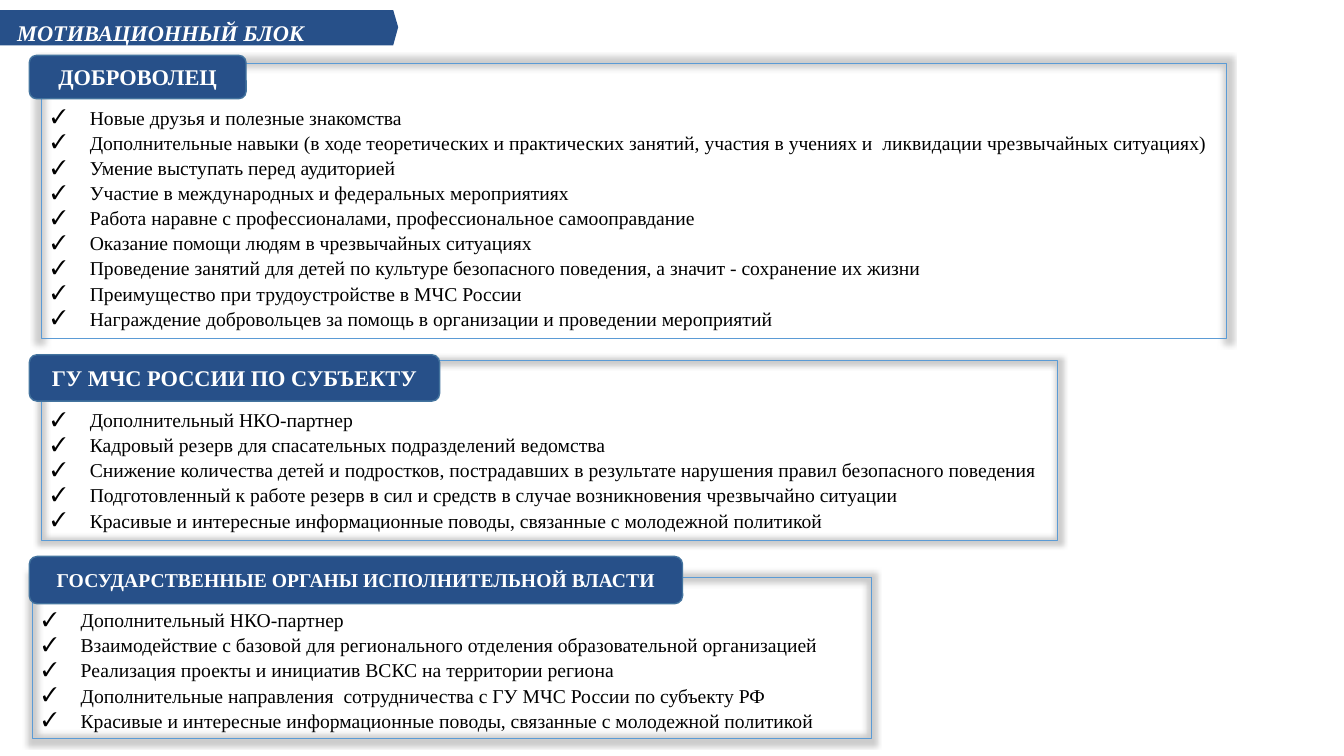
from lxml import etree
from pptx import Presentation
from pptx.dml.color import RGBColor
from pptx.enum.shapes import MSO_SHAPE
from pptx.enum.text import MSO_ANCHOR, MSO_AUTO_SIZE, PP_ALIGN
from pptx.oxml.ns import qn
from pptx.util import Inches, Pt

ROUNDED = MSO_SHAPE.ROUNDED_RECTANGLE
TOP, MIDDLE = MSO_ANCHOR.TOP, MSO_ANCHOR.MIDDLE
LEFT, CENTER = PP_ALIGN.LEFT, PP_ALIGN.CENTER
NO_FIT = MSO_AUTO_SIZE.NONE

SLIDE_W, SLIDE_H = Inches(13.33), Inches(7.5)
FONT = "Times New Roman"
COLORS = {
    "navy": "275089",
    "tab_line": "43739E",
    "panel_line": "5B9BD5",
    "text": "000000",
    "white": "FFFFFF",
    "glow": "000000",
}
COMPARISON_LAYOUT = 4
HANG = Inches(0.38)

BLOCKS = [
    {
        "heading": "ДОБРОВОЛЕЦ",
        "size": 16,
        "tab": (2.18, 7.33, 16.13, 5.73),
        "panel": (3.08, 8.4, 88.15, 36.4),
        "inset": 5.33,
        "items": [
            "Новые друзья и полезные знакомства",
            "Дополнительные навыки (в ходе теоретических и практических занятий, "
            "участия в учениях и  ликвидации чрезвычайных ситуациях)",
            "Умение выступать перед аудиторией",
            "Участие в международных и федеральных мероприятиях",
            "Работа наравне с профессионалами, профессиональное самооправдание",
            "Оказание помощи людям в чрезвычайных ситуациях",
            "Проведение занятий для детей по культуре безопасного поведения, "
            "а значит - сохранение их жизни",
            "Преимущество при трудоустройстве в МЧС России",
            "Награждение добровольцев за помощь в организации и проведении мероприятий",
        ],
    },
    {
        "heading": "ГУ МЧС РОССИИ ПО СУБЪЕКТУ",
        "size": 16,
        "tab": (2.18, 46.93, 30.53, 6.13),
        "panel": (3.08, 47.73, 75.62, 23.73),
        "inset": 6,
        "items": [
            "Дополнительный НКО-партнер",
            "Кадровый резерв для спасательных подразделений ведомства",
            "Снижение количества детей и подростков, пострадавших в результате "
            "нарушения правил безопасного поведения",
            "Подготовленный к работе резерв в сил и средств в случае "
            "возникновения чрезвычайно ситуации",
            "Красивые и интересные информационные поводы, связанные с молодежной политикой",
        ],
    },
    {
        "heading": "ГОСУДАРСТВЕННЫЕ ОРГАНЫ ИСПОЛНИТЕЛЬНОЙ ВЛАСТИ",
        "size": 14,
        "tab": (2.18, 73.6, 48.61, 6.27),
        "panel": (2.4, 76.4, 62.42, 21.33),
        "inset": 3.8,
        "items": [
            "Дополнительный НКО-партнер",
            "Взаимодействие с базовой для регионального отделения "
            "образовательной организацией",
            "Реализация проекты и инициатив ВСКС на территории региона",
            "Дополнительные направления  сотрудничества с ГУ МЧС России по субъекту РФ",
            "Красивые и интересные информационные поводы, связанные с молодежной политикой",
        ],
    },
]


def rgb(name):
    """Return a palette colour."""
    return RGBColor.from_string(COLORS[name])


def across(share):
    """Convert a percentage of the slide width to a length."""
    return int(SLIDE_W * share / 100)


def down(share):
    """Convert a percentage of the slide height to a length."""
    return int(SLIDE_H * share / 100)


def box(x, y, w, h):
    """Convert percentage shares to left, top, width and height."""
    return across(x), down(y), across(w), down(h)


def place(sp, shares):
    """Move a placeholder to the given shares of the slide."""
    sp.left, sp.top, sp.width, sp.height = box(*shares)


def write(p, text, size=14, color="text", bold=False, italic=False, align=LEFT, spacing=None):
    """Write formatted text into a paragraph."""
    r = p.add_run()
    r.text = text
    r.font.name, r.font.size = FONT, Pt(size)
    r.font.bold, r.font.italic = bold, italic
    r.font.color.rgb = rgb(color)
    p.alignment = align
    p.space_before = p.space_after = Pt(0)
    if spacing is not None:
        p.line_spacing = spacing


def frame(sp, anchor):
    """Prepare a wrapping text frame of fixed size."""
    tf = sp.text_frame
    tf.word_wrap, tf.auto_size, tf.vertical_anchor = True, NO_FIT, anchor
    return tf


def add_check(p):
    """Give a paragraph a hanging check mark bullet."""
    pPr = p._p.get_or_add_pPr()
    pPr.set("marL", str(HANG))
    pPr.set("indent", str(-HANG))
    etree.SubElement(pPr, qn("a:buFont"), typeface=FONT)
    etree.SubElement(pPr, qn("a:buChar"), char="✓")


def add_glow(sp):
    """Surround the outline of a shape with a soft grey band."""
    effects = etree.SubElement(sp._element.spPr, qn("a:effectLst"))
    glow = etree.SubElement(effects, qn("a:glow"), rad=str(Inches(0.1)))
    color = etree.SubElement(glow, qn("a:srgbClr"), val=COLORS["glow"])
    etree.SubElement(color, qn("a:alpha"), val="20000")


def fill_panel(sp, block):
    """Turn a body placeholder into an outlined checklist."""
    place(sp, block["panel"])
    sp.fill.background()
    sp.line.color.rgb, sp.line.width = rgb("panel_line"), Pt(0.75)
    add_glow(sp)
    tf = frame(sp, TOP)
    tf.margin_top = down(block["inset"])
    for i, item in enumerate(block["items"]):
        p = tf.add_paragraph() if i else tf.paragraphs[0]
        write(p, item, spacing=1.07)
        add_check(p)


def add_tab(s, block):
    """Add the rounded heading of a panel."""
    sp = s.shapes.add_shape(ROUNDED, *box(*block["tab"]))
    sp.shadow.inherit = False
    sp.fill.solid()
    sp.fill.fore_color.rgb = rgb("navy")
    sp.line.color.rgb, sp.line.width = rgb("tab_line"), Pt(1)
    p = frame(sp, MIDDLE).paragraphs[0]
    write(p, block["heading"], size=block["size"], color="white", bold=True, align=CENTER)


def add_banner(s):
    """Add the pointed ribbon behind the title."""
    points = [(29.26, 1.33), (29.63, 3.6), (29.26, 6), (0, 6)]
    builder = s.shapes.build_freeform(0, down(1.33))
    builder.add_line_segments([(across(x), down(y)) for x, y in points])
    sp = builder.convert_to_shape()
    sp.shadow.inherit = False
    sp.fill.solid()
    sp.fill.fore_color.rgb = rgb("navy")
    sp.line.fill.background()


def fill_title(s, text):
    """Format the title and bring it in front of the ribbon."""
    sp = s.shapes.title
    place(sp, (1.28, 0.13, 22.36, 5.2))
    tf = frame(sp, TOP)
    tf.margin_left = tf.margin_top = tf.margin_right = tf.margin_bottom = 0
    write(tf.paragraphs[0], text, size=16, color="white", bold=True, italic=True, spacing=Pt(32.1))
    s.shapes._spTree.append(sp._element)


def main():
    """Build and save the slide."""
    prs = Presentation()
    prs.slide_width, prs.slide_height = SLIDE_W, SLIDE_H
    s = prs.slides.add_slide(prs.slide_layouts[COMPARISON_LAYOUT])
    *bodies, spare = [sp for sp in s.placeholders if sp.placeholder_format.idx]
    spare._element.getparent().remove(spare._element)
    for sp, block in zip(bodies, BLOCKS):
        fill_panel(sp, block)
    add_banner(s)
    fill_title(s, "МОТИВАЦИОННЫЙ БЛОК")
    for block in BLOCKS:
        add_tab(s, block)
    prs.save("out.pptx")


if __name__ == "__main__":
    main()
